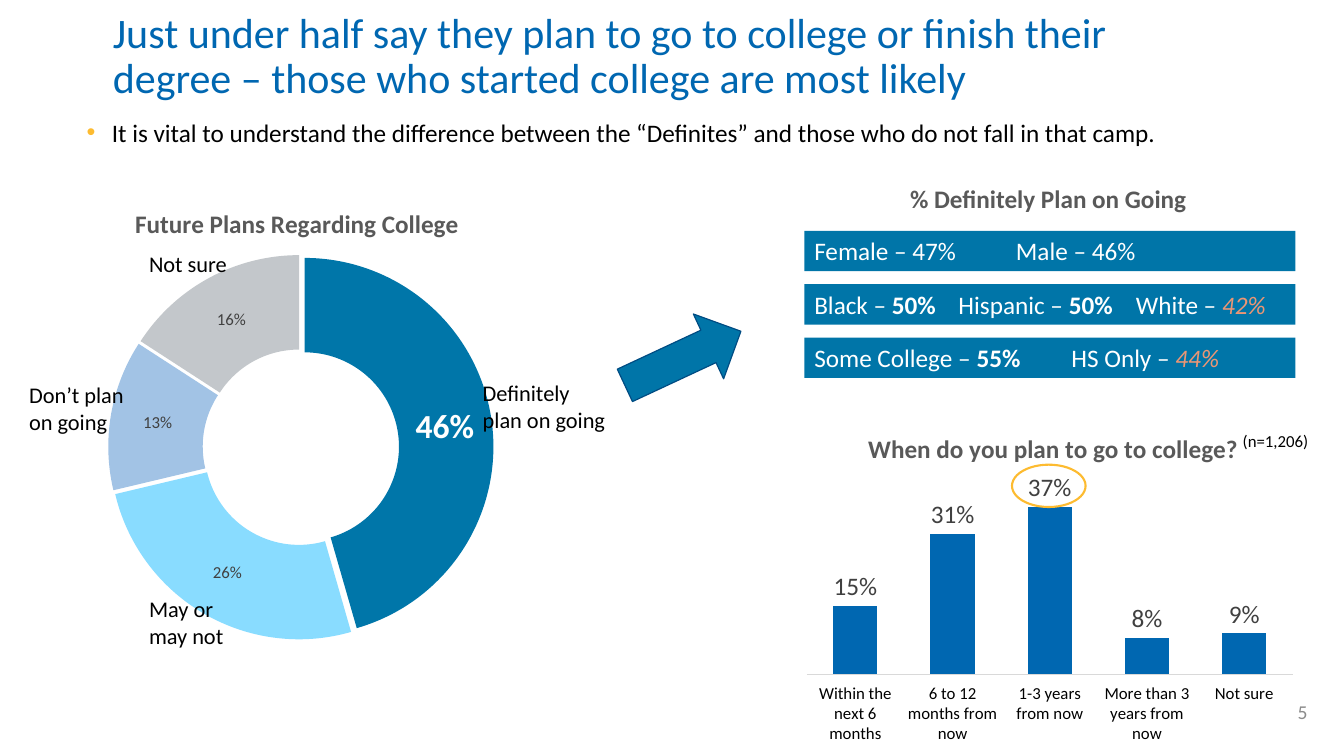
from pptx import Presentation
from pptx.chart.data import CategoryChartData
from pptx.dml.color import RGBColor
from pptx.enum.chart import XL_CHART_TYPE, XL_LABEL_POSITION, XL_TICK_LABEL_POSITION, XL_TICK_MARK
from pptx.enum.shapes import MSO_SHAPE
from pptx.enum.text import MSO_ANCHOR, PP_ALIGN
from pptx.oxml import parse_xml
from pptx.oxml.ns import nsdecls
from pptx.util import Inches, Pt

DOUGHNUT, COLUMN = XL_CHART_TYPE.DOUGHNUT, XL_CHART_TYPE.COLUMN_CLUSTERED
LEFT, RIGHT = PP_ALIGN.LEFT, PP_ALIGN.RIGHT
TOP, MIDDLE = MSO_ANCHOR.TOP, MSO_ANCHOR.MIDDLE

# Content: a run is (text, style name); boxes are in grid columns and rows
TITLE = ("Just under half say they plan to go to college or finish their degree"
         " – those who started college are most likely")
LEAD = ("It is vital to understand the difference between the “Definites” and"
        " those who do not fall in that camp.")
PLANS_TITLE = "Future Plans Regarding College"
PLANS = [(0.46, "teal"), (0.26, "sky"), (0.13, "periwinkle"), (0.16, "silver")]
PLAN_LABELS = [
    ("Definitely plan on going", (14.07, 14.84, 4.38, 2.56)),
    ("May or may not", (4.14, 23.44, 3.72, 2.56)),
    ("Don’t plan on going", (0.57, 14.92, 3.6, 2.56)),
    ("Not sure", (4.14, 9.72, 3.21, 1.48)),
]
GROUPS_TITLE = "% Definitely Plan on Going"
GROUPS = [  # runs, tab stops in inches
    ([("Female – 47%\tMale – 46%", "plain")], [2]),
    ([("Black – ", "plain"), ("50%", "high"), ("\tHispanic – ", "plain"), ("50%", "high"),
      ("\tWhite – ", "plain"), ("42%", "low")], [1.43, 3.19]),
    ([("Some College – ", "plain"), ("55%", "high"), ("\tHS Only – ", "plain"),
      ("44%", "low")], [2.55]),
]
TIMING_TITLE = "When do you plan to go to college?"
TIMING = {"Within the next 6 months": 0.15, "6 to 12 months from now": 0.31,
          "1-3 years from now": 0.37, "More than 3 years from now": 0.08, "Not sure": 0.09}
SAMPLE = "(n=1,206)"
PAGE = "5"

THEME = {
    "font": "Calibri",
    "size": {"title": 30, "big": 24, "body": 18, "label": 16, "page": 14, "small": 12},
    "color": {"blue": "0067B1", "teal": "0076A9", "panel": "0075A8", "navy": "004C83",
              "sky": "89DCFF", "periwinkle": "A2C3E5", "silver": "C3C7CB", "gold": "FDBB30",
              "heading": "595959", "value": "404040", "page": "8C8C8C", "axis": "D9D9D9",
              "coral": "EC9674", "white": "FFFFFF", "black": "000000"},
}
STYLES = {"plain": {}, "high": {"bold": True}, "low": {"italic": True, "color": "coral"}}

prs = Presentation()
prs.slide_width, prs.slide_height = Inches(13.33), Inches(7.5)
COL, ROW = prs.slide_width / 40, prs.slide_height / 30
s = prs.slides.add_slide(prs.slide_layouts[1])


def box(x, y, w, h):
    return [round(v) for v in (x * COL, y * ROW, w * COL, h * ROW)]


def rgb(name):
    return RGBColor.from_string(THEME["color"][name])


def style(font, size="body", color="black", bold=False, italic=False):
    font.name, font.size = THEME["font"], Pt(THEME["size"][size])
    font.color.rgb = rgb(color)
    font.bold, font.italic = bold, italic


def write(tf, runs, align=LEFT, anchor=TOP, wrap=True, **fmt):
    tf.word_wrap, tf.vertical_anchor = wrap, anchor
    p = tf.paragraphs[0]
    p.alignment = align
    for text, name in ([(runs, "plain")] if isinstance(runs, str) else runs):
        r = p.add_run()
        r.text = text
        style(r.font, **{**fmt, **STYLES[name]})
    return p


def text_box(text, place, **fmt):
    write(s.shapes.add_textbox(*box(*place)).text_frame, text, **fmt)


def shape(kind, place, fill=None, line=None, width=1):
    sp = s.shapes.add_shape(kind, *box(*place))
    sp.shadow.inherit = False
    if fill:
        sp.fill.solid()
        sp.fill.fore_color.rgb = rgb(fill)
    else:
        sp.fill.background()
    if line:
        sp.line.color.rgb, sp.line.width = rgb(line), Pt(width)
    else:
        sp.line.fill.background()
    return sp


def layout(x, y, w=None, h=None):
    parts = "" if w is None else '<c:layoutTarget val="inner"/>'
    parts += '<c:xMode val="edge"/><c:yMode val="edge"/>'
    parts += "".join(f'<c:{k} val="{v}"/>' for k, v in zip("xywh", (x, y, w, h)) if v is not None)
    return parse_xml(f'<c:layout {nsdecls("c")}><c:manualLayout>{parts}</c:manualLayout></c:layout>')


def chart(kind, place, cats, vals, title, title_at, plot_at, label_size):
    data = CategoryChartData(number_format="0%")
    data.categories = cats
    data.add_series("Series 1", vals)
    ch = s.shapes.add_chart(kind, *box(*place), data).chart
    style(ch.font, size="small")
    ch.has_legend = False
    write(ch.chart_title.text_frame, title, color="heading", bold=True)
    ch.chart_title.include_in_layout = False
    heading = ch.chart_title._element
    area = ch._chartSpace.chart.plotArea
    for parent in (heading, area):
        for old in parent.xpath("c:layout"):
            parent.remove(old)
    heading.xpath("c:tx")[0].addnext(layout(*title_at))
    area.insert(0, layout(*plot_at))
    plot = ch.plots[0]
    plot.has_data_labels = True
    labels = plot.series[0].data_labels
    labels.show_value = True
    labels.number_format, labels.number_format_is_linked = "0%", False
    style(labels.font, size=label_size, color="value")
    return ch, plot, labels


# Title and lead bullet
title = s.shapes.title
title.left, title.top, title.width, title.height = box(3.06, 0.16, 30.51, 4.24)
write(title.text_frame, TITLE, anchor=MIDDLE, size="title", color="blue").line_spacing = 0.9

body = s.placeholders[1]
body.left, body.top, body.width, body.height = box(2.28, 4.44, 33.6, 3.76)
p = write(body.text_frame, LEAD)
p.space_before = Pt(0)
pPr = p._p.get_or_add_pPr()
pPr.set("marL", str(Inches(0.25)))
pPr.set("indent", str(-Inches(0.25)))
pPr.append(parse_xml(f'<a:buClr {nsdecls("a")}><a:srgbClr val="{THEME["color"]["gold"]}"/></a:buClr>'))
pPr.append(parse_xml(f'<a:buChar {nsdecls("a")} char="•"/>'))

# Doughnut of future plans
ch, plot, labels = chart(DOUGHNUT, (-2.07, 7.04, 22.05, 18.96), ["1", "2", "3", "4"],
                         [v for v, _ in PLANS], PLANS_TITLE, (0.27, 0.05),
                         (0.24, 0.16, 0.52, 0.81), "small")
plot.vary_by_categories = True
series = plot.series[0]
series._element.xpath("c:tx")[0].addnext(parse_xml(f'<c:explosion {nsdecls("c")} val="4"/>'))
for i, (_, color) in enumerate(PLANS):
    fill = series.points[i].format.fill
    fill.solid()
    fill.fore_color.rgb = rgb(color)
style(series.points[0].data_label.font, size="big", color="white", bold=True)
for text, place in PLAN_LABELS:
    text_box(text, place, size="label")

# Arrow to the group panels
arrow = shape(MSO_SHAPE.RIGHT_ARROW, (18.42, 12.8, 3.81, 2.84), "panel", "navy", 0.85)
arrow.rotation = 335
text_box(GROUPS_TITLE, (26.79, 7.08, 8.91, 1.6), wrap=False, color="heading", bold=True)
for i, (runs, stops) in enumerate(GROUPS):
    panel = shape(MSO_SHAPE.RECTANGLE, (23.94, 9.16 + 2.12 * i, 14.61, 1.6), "panel")
    p = write(panel.text_frame, runs, color="white")
    tabs = "".join(f'<a:tab pos="{Inches(x)}" algn="l"/>' for x in stops)
    p._p.get_or_add_pPr().append(parse_xml(f'<a:tabLst {nsdecls("a")}>{tabs}</a:tabLst>'))

# Column chart of timing
ch, plot, labels = chart(COLUMN, (23.55, 16.52, 15.39, 13.84), list(TIMING),
                         list(TIMING.values()), TIMING_TITLE, (0.14, 0.03),
                         (0.03, 0.22, 0.94, 0.52), "body")
labels.position = XL_LABEL_POSITION.OUTSIDE_END
plot.gap_width, plot.vary_by_categories = 120, False
fill = plot.series[0].format.fill
fill.solid()
fill.fore_color.rgb = rgb("blue")
cat, val = ch.category_axis, ch.value_axis
cat.major_tick_mark = cat.minor_tick_mark = XL_TICK_MARK.NONE
cat.tick_label_position = XL_TICK_LABEL_POSITION.LOW
cat.format.line.color.rgb, cat.format.line.width = rgb("axis"), Pt(0.75)
style(cat.tick_labels.font, size="small")
val.visible = val.has_major_gridlines = False
val.minimum_scale, val.maximum_scale = 0, 0.4

# Highlight, sample size and slide number
shape(MSO_SHAPE.OVAL, (30.12, 18.44, 2.19, 1.68), line="gold", width=1.5)
text_box(SAMPLE, (36.69, 16.88, 3.72, 1.2), size="small")
text_box(PAGE, (36.27, 27.44, 2.94, 1.6), align=RIGHT, anchor=MIDDLE, size="page", color="page")

prs.save("out.pptx")
